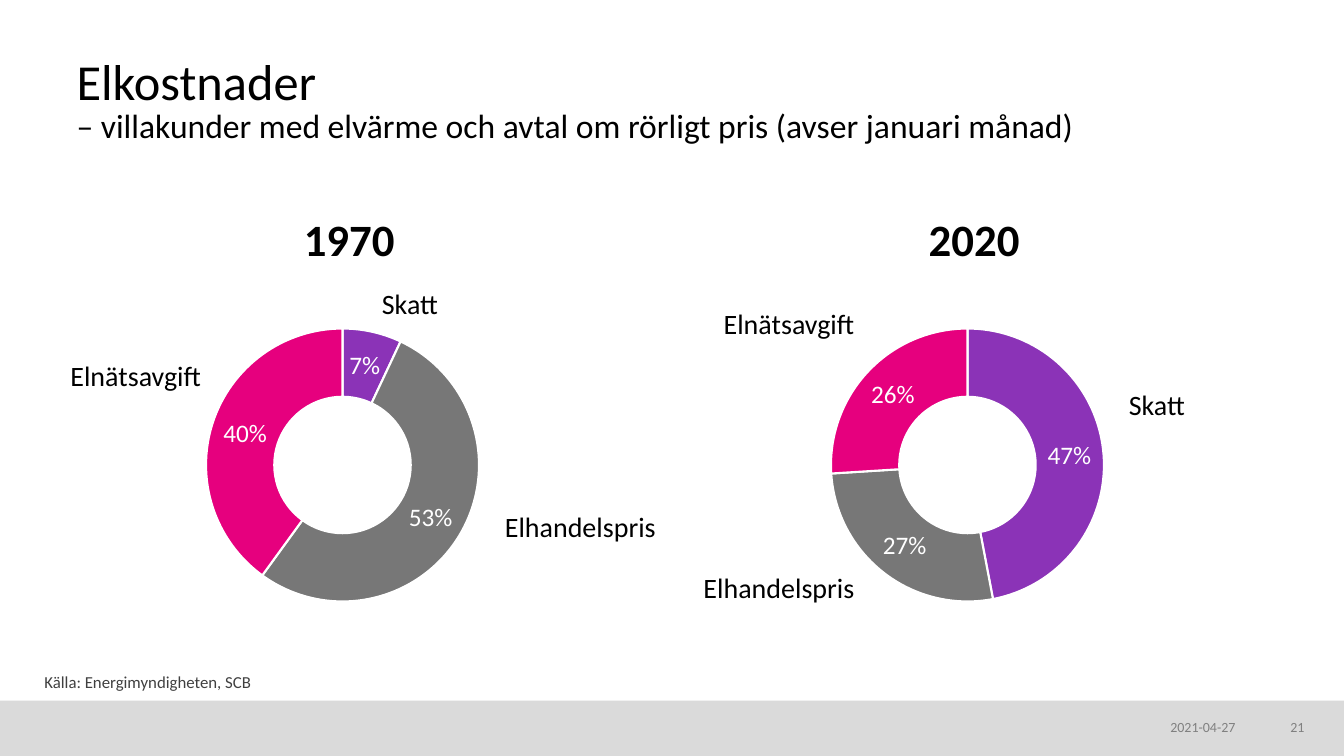
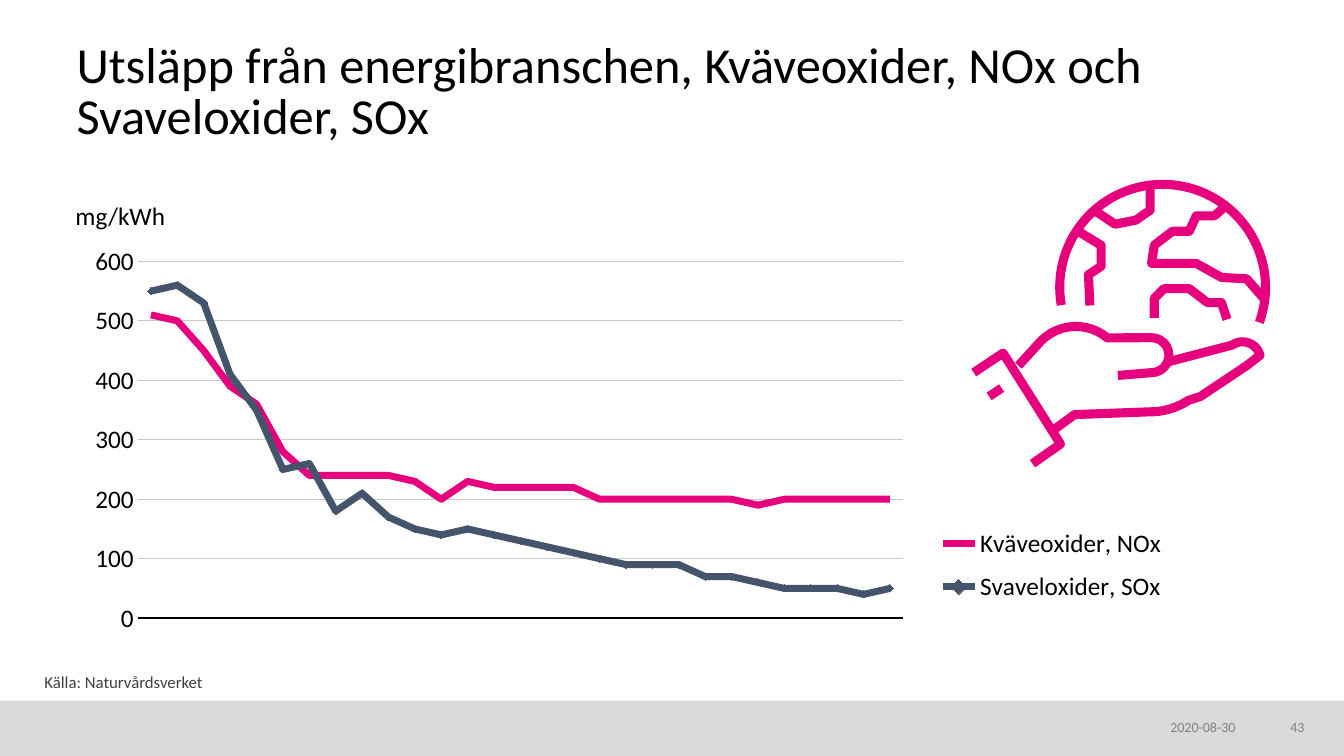
"""Build two slides on electricity costs and energy-sector emissions."""
import math

import pptx
import pptx.chart.data
import pptx.dml.color
import pptx.enum.chart
import pptx.enum.shapes
import pptx.enum.text
import pptx.oxml
import pptx.util

Pt = pptx.util.Pt
RGBColor = pptx.dml.color.RGBColor
Align = pptx.enum.text.PP_ALIGN
Anchor = pptx.enum.text.MSO_ANCHOR
Shape = pptx.enum.shapes.MSO_SHAPE
ChartType = pptx.enum.chart.XL_CHART_TYPE

FONT = "Calibri"
BLACK = RGBColor(0x00, 0x00, 0x00)
WHITE = RGBColor(0xFF, 0xFF, 0xFF)
BAND_GREY = RGBColor(0xDA, 0xDA, 0xDA)
FOOTER_GREY = RGBColor(0x80, 0x80, 0x80)
SOURCE_GREY = RGBColor(0x40, 0x40, 0x40)
GRID_GREY = RGBColor(0xC9, 0xC9, 0xC9)
PINK = RGBColor(0xE6, 0x00, 0x7E)
PURPLE = RGBColor(0x8B, 0x33, 0xB7)
GREY = RGBColor(0x77, 0x77, 0x77)
SLATE = RGBColor(0x44, 0x54, 0x6A)

COST_PARTS = [("Skatt", 55.4, PURPLE), ("Elhandelspris", 123.8, GREY),
              ("Elnätsavgift", 109.4, PINK)]
COST_YEARS = [
    ("1970", 49.7, (0.07, 0.53, 0.4), [(265.7, 203.8), (353.5, 362.9), (43.2, 255.6)]),
    ("2020", 496.1, (0.47, 0.27, 0.26), [(799.2, 275.8), (495.4, 406.8), (509.8, 218.2)]),
]
YEAR_OFFSET = 159.8

EMISSION_YEARS = range(1990, 2019)
NOX = (510, 500, 450, 390, 360, 280, 240, 240, 240, 240, 230, 200, 230, 220, 220,
       220, 220, 200, 200, 200, 200, 200, 200, 190, 200, 200, 200, 200, 200)
SOX = (550, 560, 530, 410, 350, 250, 260, 180, 210, 170, 150, 140, 150, 140, 130,
       120, 110, 100, 90, 90, 90, 70, 70, 60, 50, 50, 50, 40, 50)

GLOBE_X, GLOBE_Y, GLOBE_RADIUS = 830.5, 205.2, 73.5
STROKE_WIDTH = 6.5
ARC_UNITS_PER_DEGREE = 0.6
ARC_STEPS = 12


def style_font(font, size, color, bold=False):
    """Apply the deck's typeface with a size and colour."""
    font.name = FONT
    font.size = Pt(size)
    font.bold = bold
    font.color.rgb = color


def style_line(line, color, width):
    """Give a line its colour and width."""
    line.color.rgb = color
    line.width = Pt(width)


def add_text(slide, box, text, sizes, color=BLACK, bold=False, align=Align.LEFT,
             anchor=Anchor.TOP, spacing=0.9, inset=True, wrap=False):
    """Add a text box whose runs take the given sizes in turn."""
    frame = slide.shapes.add_textbox(*map(Pt, box)).text_frame
    frame.word_wrap = wrap
    frame.vertical_anchor = anchor
    if not inset:
        frame.margin_left = frame.margin_right = 0
        frame.margin_top = frame.margin_bottom = 0
    paragraph = frame.paragraphs[0]
    paragraph.text = text
    paragraph.alignment = align
    paragraph.line_spacing = spacing
    for run, size in zip(paragraph.runs, sizes):
        style_font(run.font, size, color, bold)


def add_base_slide(deck, title, title_sizes, source, date, number):
    """Add a slide with the shared band, title, source line and footer."""
    slide = deck.slides.add_slide(deck.slide_layouts[6])
    band = slide.shapes.add_shape(Shape.RECTANGLE, 0, Pt(500.4), Pt(960), Pt(39.6))
    band.shadow.inherit = False
    band.fill.solid()
    band.fill.fore_color.rgb = BAND_GREY
    band.line.fill.background()
    add_text(slide, (54.7, 26.8, 854.6, 77), title, title_sizes,
             anchor=Anchor.BOTTOM, spacing=0.85, inset=False, wrap=True)
    add_text(slide, (31.7, 479.5, 350, 16.6), source, [12], SOURCE_GREY,
             anchor=Anchor.MIDDLE, inset=False, wrap=True)
    for left, width, text, align in ((836, 53.3, date, Align.LEFT),
                                     (903.6, 28.1, number, Align.RIGHT)):
        add_text(slide, (left, 513.4, width, 14), text, [10], FOOTER_GREY,
                 align=align, spacing=1.0, inset=False, wrap=True)
    return slide


def place_part(part, index, box, inner=False):
    """Give a chart part a fixed place as fractions of the chart."""
    for old in part.findall(pptx.oxml.ns.qn("c:layout")):
        part.remove(old)
    settings = [("layoutTarget", "inner")] if inner else []
    settings += [("xMode", "edge"), ("yMode", "edge"), *zip("xywh", box)]
    children = "".join(f'<c:{key} val="{value}"/>' for key, value in settings)
    part.insert(index, pptx.oxml.parse_xml(
        f'<c:layout {pptx.oxml.ns.nsdecls("c")}><c:manualLayout>{children}'
        '</c:manualLayout></c:layout>'))


def add_chart(slide, kind, box, categories, series, plot_box):
    """Add a chart with the deck's font and a fixed plot area."""
    data = pptx.chart.data.CategoryChartData()
    data.categories = categories
    for name, values in series:
        data.add_series(name, values)
    chart = slide.shapes.add_chart(kind, *map(Pt, box), data).chart
    style_font(chart.font, 10, BLACK)
    chart.has_title = False
    chart.has_legend = False
    place_part(chart.plots[0]._element.getparent(), 0, plot_box, inner=True)
    return chart


def add_cost_doughnut(slide, left, shares):
    """Add a doughnut of the three cost shares."""
    chart = add_chart(slide, ChartType.DOUGHNUT, (left, 169.9, 399.6, 324.9),
                      ["1", "2", "3"], [("Series 1", shares)],
                      (0.244, 0.164, 0.488, 0.671))
    plot = chart.plots[0]
    plot.vary_by_categories = True
    for index, (_, _, color) in enumerate(COST_PARTS):
        share = plot.series[0].points[index].format
        share.fill.solid()
        share.fill.fore_color.rgb = color
        style_line(share.line, WHITE, 1.5)
    plot.has_data_labels = True
    labels = plot.data_labels
    labels.show_value = True
    labels.show_percentage = False
    labels.number_format = "0%"
    labels.number_format_is_linked = False
    style_font(labels.font, 18, WHITE)


def style_emission_axes(years, amounts):
    """Style the unlabelled year axis and the gridded amount axis."""
    for axis in (years, amounts):
        axis.major_tick_mark = pptx.enum.chart.XL_TICK_MARK.NONE
        axis.minor_tick_mark = pptx.enum.chart.XL_TICK_MARK.NONE
        style_font(axis.tick_labels.font, 18, BLACK)
    years.tick_label_position = pptx.enum.chart.XL_TICK_LABEL_POSITION.NONE
    style_line(years.format.line, BLACK, 1.5)
    amounts.minimum_scale, amounts.maximum_scale, amounts.major_unit = 0, 600, 100
    amounts.tick_labels.number_format = "0;[Red]0"
    amounts.tick_labels.number_format_is_linked = False
    amounts.format.line.fill.background()
    amounts.has_major_gridlines = True
    style_line(amounts.major_gridlines.format.line, GRID_GREY, 0.75)


def add_emission_lines(slide):
    """Add the line chart of yearly emissions."""
    chart = add_chart(slide, ChartType.LINE_MARKERS, (31.7, 121, 877.7, 353.5),
                      [str(year) for year in EMISSION_YEARS],
                      [("Kväveoxider, NOx", NOX), ("Svaveloxider, SOx", SOX)],
                      (0.076, 0.186, 0.623, 0.721))
    chart.plots[0].vary_by_categories = False
    nox, sox = chart.plots[0].series
    for series, color in ((nox, PINK), (sox, SLATE)):
        series.smooth = False
        style_line(series.format.line, color, 5)
    nox.marker.style = pptx.enum.chart.XL_MARKER_STYLE.NONE
    sox.marker.style = pptx.enum.chart.XL_MARKER_STYLE.DIAMOND
    sox.marker.size = 5
    sox.marker.format.fill.solid()
    sox.marker.format.fill.fore_color.rgb = SLATE
    sox.marker.format.line.fill.background()
    style_emission_axes(chart.category_axis, chart.value_axis)
    chart.has_legend = True
    chart.legend.position = pptx.enum.chart.XL_LEGEND_POSITION.RIGHT
    chart.legend.include_in_layout = False
    style_font(chart.legend.font, 18, BLACK)
    place_part(chart.legend._element, 1, (0.72, 0.7, 0.2, 0.2))


def arc_points(center_x, center_y, radius, start, end):
    """Return points along an arc between two clockwise angles in degrees."""
    angles = [math.radians(start + (end - start) * step / ARC_STEPS)
              for step in range(ARC_STEPS + 1)]
    return [(center_x + radius * math.cos(angle), center_y + radius * math.sin(angle))
            for angle in angles]


def style_stroke(stroke):
    """Turn a shape into an unfilled icon stroke."""
    stroke.shadow.inherit = False
    stroke.fill.background()
    style_line(stroke.line, PINK, STROKE_WIDTH)


def add_stroke(icon, points):
    """Draw an open line through points measured from the globe's centre."""
    start, *rest = [(Pt(GLOBE_X + x), Pt(GLOBE_Y + y)) for x, y in points]
    builder = icon.shapes.build_freeform(*start)
    builder.add_line_segments(rest, close=False)
    style_stroke(builder.convert_to_shape())


def add_globe(icon):
    """Draw the globe's open rim and its four coastlines."""
    rim = icon.shapes.add_shape(
        Shape.ARC, Pt(GLOBE_X - GLOBE_RADIUS), Pt(GLOBE_Y - GLOBE_RADIUS),
        Pt(2 * GLOBE_RADIUS), Pt(2 * GLOBE_RADIUS))
    for index, degrees in enumerate((170, 20)):
        rim.adjustments[index] = degrees * ARC_UNITS_PER_DEGREE
    style_stroke(rim)
    north = [(-49, -55), (-34, -45), (-19, -48), (-9, -55), (-9, -74)]
    west = [(-62, -41), (-44, -30), (-44, -15), (-53, -9), (-52, 13)]
    east = [(46, -59), (37, -51), (24, -51), (19, -40), (7, -40), (-6, -30),
            (-8, -17), (24, -17), (42, -7), (60, -6), (74, 10)]
    south = [(-6, 22), (-6, 8), (1, 1), (19, 1), (32, 11), (42, 11), (46, 23)]
    for coast in (north, west, east, south):
        add_stroke(icon, coast)


def add_hand(icon):
    """Draw the cuff, its button, the thumb and the palm under the globe."""
    cuff = [(-135, 61), (-114, 47), (-73, 112), (-93, 126)]
    button = [(-124, 78), (-115, 72)]
    knuckle = arc_points(-62, 63, 35, -135, -50)
    thumb_tip = arc_points(-8, 48.5, 12.5, -90, 90)
    thumb = [(-103, 56), *knuckle, *thumb_tip, (-32, 63)]
    heel = arc_points(-9, 39, 50, 90, 57)
    fingertip = arc_points(57, 52, 13, -15, -125)
    palm = [(-78, 102), (-63, 91), *heel, (27, 78), (60, 56), *fingertip, (5, 53)]
    for part in (cuff, button, thumb, palm):
        add_stroke(icon, part)


def build_cost_slide(deck):
    """Build the slide comparing electricity costs in two years."""
    slide = add_base_slide(
        deck, "Elkostnader\v– villakunder med elvärme och avtal om rörligt pris "
        "(avser januari månad)", [36, 24], "Källa: Energimyndigheten, SCB",
        "2021-04-27", "21")
    for year, left, shares, label_places in COST_YEARS:
        add_text(slide, (left + YEAR_OFFSET, 152.2, 79.9, 42.5), year, [32], bold=True,
                 align=Align.CENTER)
        for (label, width, _), place in zip(COST_PARTS, label_places):
            add_text(slide, (*place, width, 28.8), label, [20])
        add_cost_doughnut(slide, left, shares)


def build_emission_slide(deck):
    """Build the slide on nitrogen and sulphur oxide emissions."""
    slide = add_base_slide(
        deck, "Utsläpp från energibranschen, Kväveoxider, NOx och Svaveloxider, SOx",
        [36], "Källa: Naturvårdsverket", "2020-08-30", "43")
    icon = slide.shapes.add_group_shape()
    add_globe(icon)
    add_hand(icon)
    add_text(slide, (46.8, 141.8, 85.7, 26.6), "mg/kWh", [18], wrap=True)
    add_emission_lines(slide)


def main():
    """Build and save the deck."""
    deck = pptx.Presentation()
    deck.slide_width, deck.slide_height = Pt(960), Pt(540)
    build_cost_slide(deck)
    build_emission_slide(deck)
    deck.save("out.pptx")


if __name__ == "__main__":
    main()
